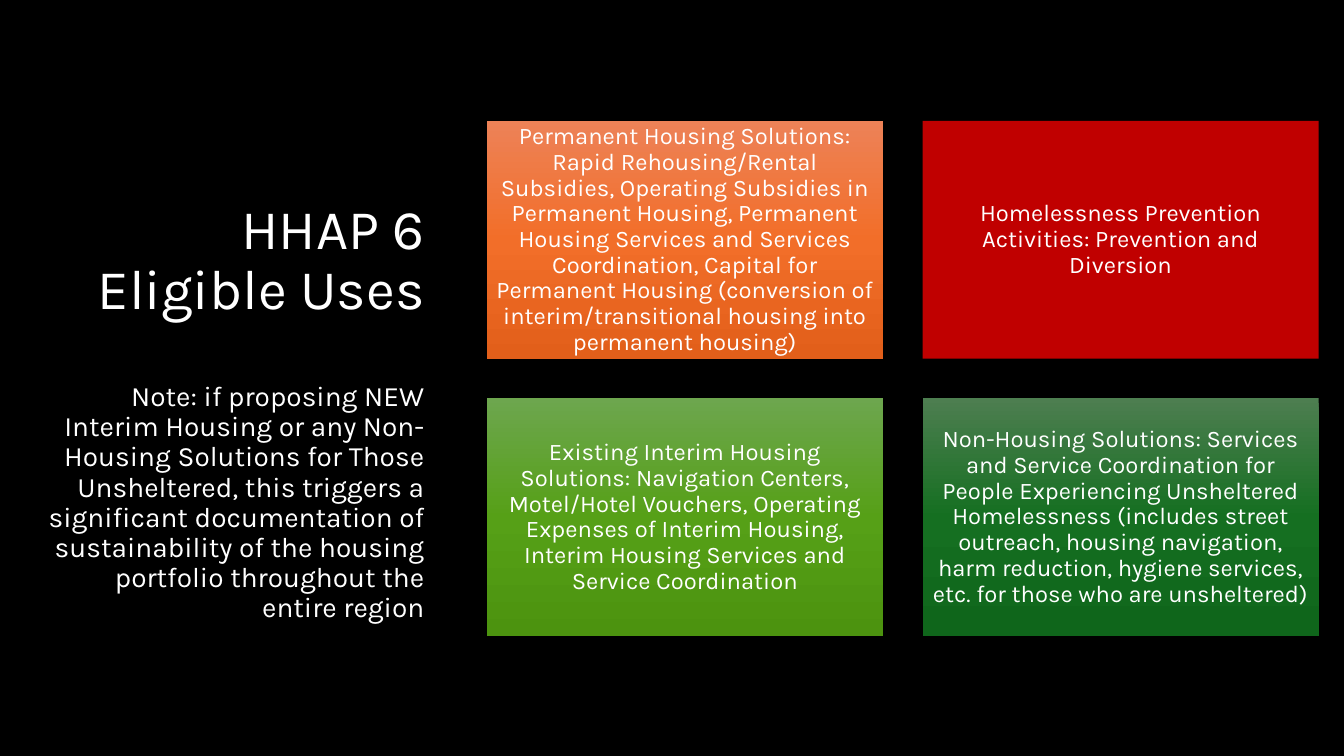
from pptx import Presentation
from pptx.dml.color import RGBColor
from pptx.enum.shapes import MSO_SHAPE
from pptx.enum.text import MSO_ANCHOR, PP_ALIGN
from pptx.oxml import parse_xml
from pptx.oxml.ns import nsdecls
from pptx.util import Cm, Pt

# Content
HEADING = [
    # text, size, space before
    ("HHAP 6 Eligible Uses", 40, 0),
    ("Note: if proposing NEW Interim Housing or any Non-Housing Solutions for "
     "Those Unsheltered, this triggers a significant documentation of "
     "sustainability of the housing portfolio throughout the entire region", 20, 43),
]
USES = [
    ("orange", "Permanent Housing Solutions: Rapid Rehousing/Rental Subsidies, "
     "Operating Subsidies in Permanent Housing, Permanent Housing Services and "
     "Services Coordination, Capital for Permanent Housing (conversion of "
     "interim/transitional housing into permanent housing)"),
    ("red", "Homelessness Prevention Activities: Prevention and Diversion"),
    ("lime", "Existing Interim Housing Solutions: Navigation Centers, Motel/Hotel "
     "Vouchers, Operating Expenses of Interim Housing, Interim Housing Services "
     "and Service Coordination"),
    ("green", "Non-Housing Solutions: Services and Service Coordination for People "
     "Experiencing Unsheltered Homelessness (includes street outreach, housing "
     "navigation, harm reduction, hygiene services, etc. for those who are "
     "unsheltered)"),
]
COLORS = {
    "background": "000000",
    "text": "FFFFFF",
    "red": "C00000",
}
GRADIENTS = {
    "orange": ("ED8257", "F26E29", "E25F1A"),
    "lime": ("6DA64E", "56A017", "4C930F"),
    "green": ("4D7E50", "156F21", "0F661B"),
}
FONT = "Karla"
COLUMNS = 2
GRID_LEFT, GRID_TOP = 12.27, 3.05
CARD_WIDTH, CARD_HEIGHT, GAP = 9.98, 5.99, 1.0


def set_frame(frame, **values):
    for name, value in values.items():
        setattr(frame, name, value)


def write_paragraph(paragraph, text, size, alignment, space_before=0):
    layout = {"alignment": alignment, "line_spacing": 0.9,
              "space_before": Pt(space_before)}
    for name, value in layout.items():
        setattr(paragraph, name, value)
    run = paragraph.add_run()
    run.text = text
    for name, value in {"name": FONT, "size": Pt(size)}.items():
        setattr(run.font, name, value)
    run.font.color.rgb = RGBColor.from_string(COLORS["text"])


def fill_card(shape, color):
    if color in COLORS:
        shape.fill.solid()
        shape.fill.fore_color.rgb = RGBColor.from_string(COLORS[color])
        return
    shape.fill.gradient()
    shape.fill.gradient_angle = 270
    stop_list = shape.fill.gradient_stops[0]._gs.getparent()
    for stop in list(stop_list):
        stop_list.remove(stop)
    for index, value in enumerate(GRADIENTS[color]):
        stop_list.append(parse_xml(
            f'<a:gs {nsdecls("a")} pos="{index * 50000}">'
            f'<a:srgbClr val="{value}"/></a:gs>'))


presentation = Presentation()
presentation.slide_width, presentation.slide_height = Cm(33.87), Cm(19.05)
slide = presentation.slides.add_slide(presentation.slide_layouts[6])
slide.background.fill.solid()
slide.background.fill.fore_color.rgb = RGBColor.from_string(COLORS["background"])

# Heading and note
heading = slide.shapes.add_textbox(Cm(0.97), Cm(2.16), Cm(9.98), Cm(13.69))
frame = heading.text_frame
set_frame(frame, word_wrap=True, vertical_anchor=MSO_ANCHOR.BOTTOM)
for index, (text, size, space_before) in enumerate(HEADING):
    paragraph = frame.add_paragraph() if index else frame.paragraphs[0]
    write_paragraph(paragraph, text, size, PP_ALIGN.RIGHT, space_before)

# Grid of eligible uses
for index, (color, text) in enumerate(USES):
    row, column = divmod(index, COLUMNS)
    card = slide.shapes.add_shape(
        MSO_SHAPE.RECTANGLE,
        Cm(GRID_LEFT + column * (CARD_WIDTH + GAP)),
        Cm(GRID_TOP + row * (CARD_HEIGHT + GAP)),
        Cm(CARD_WIDTH), Cm(CARD_HEIGHT))
    card.shadow.inherit = False
    card.line.fill.background()
    fill_card(card, color)
    inset = Cm(0.18)
    set_frame(card.text_frame, word_wrap=True, vertical_anchor=MSO_ANCHOR.MIDDLE,
              margin_left=inset, margin_right=inset,
              margin_top=inset, margin_bottom=inset)
    write_paragraph(card.text_frame.paragraphs[0], text, 17, PP_ALIGN.CENTER)

presentation.save("out.pptx")
